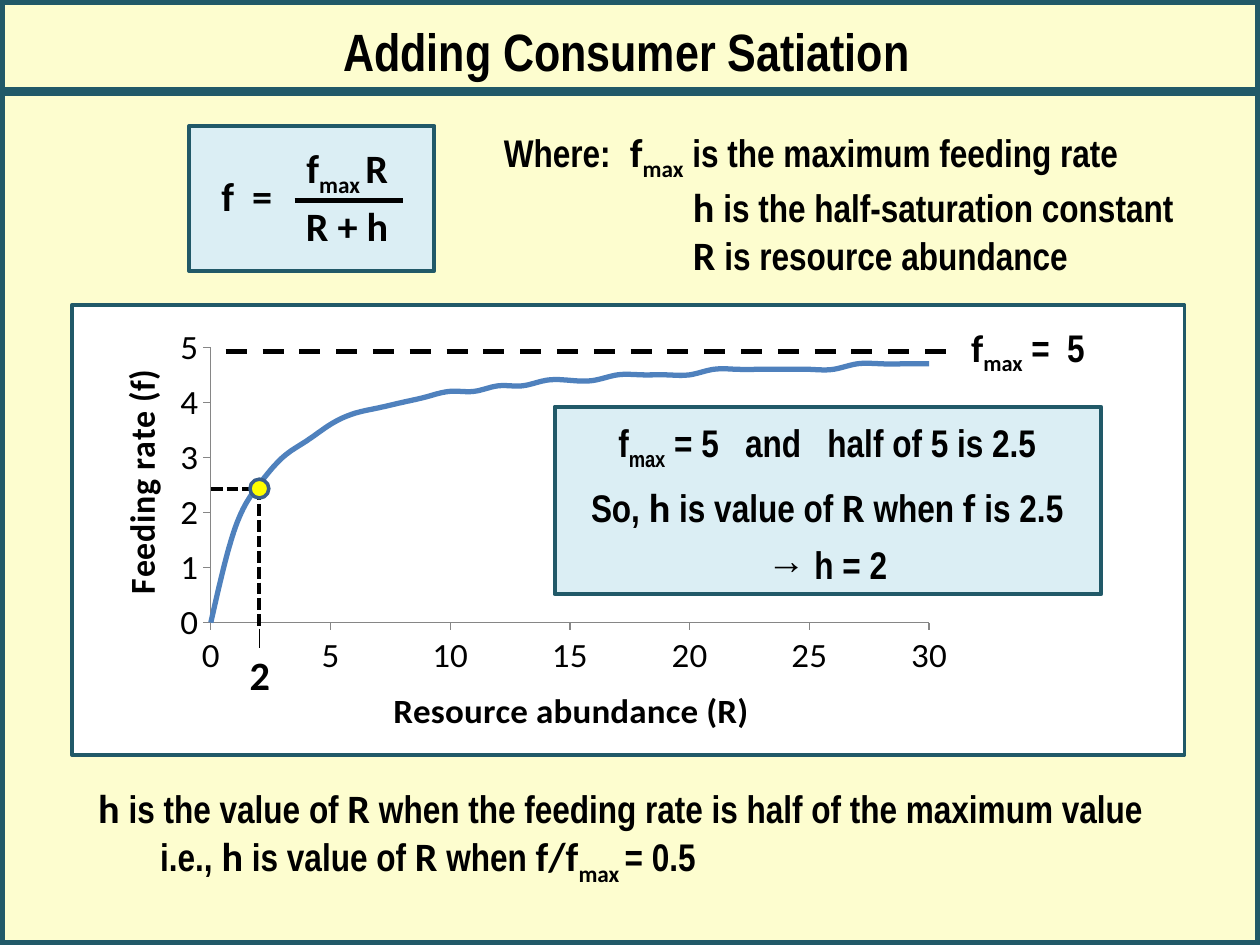
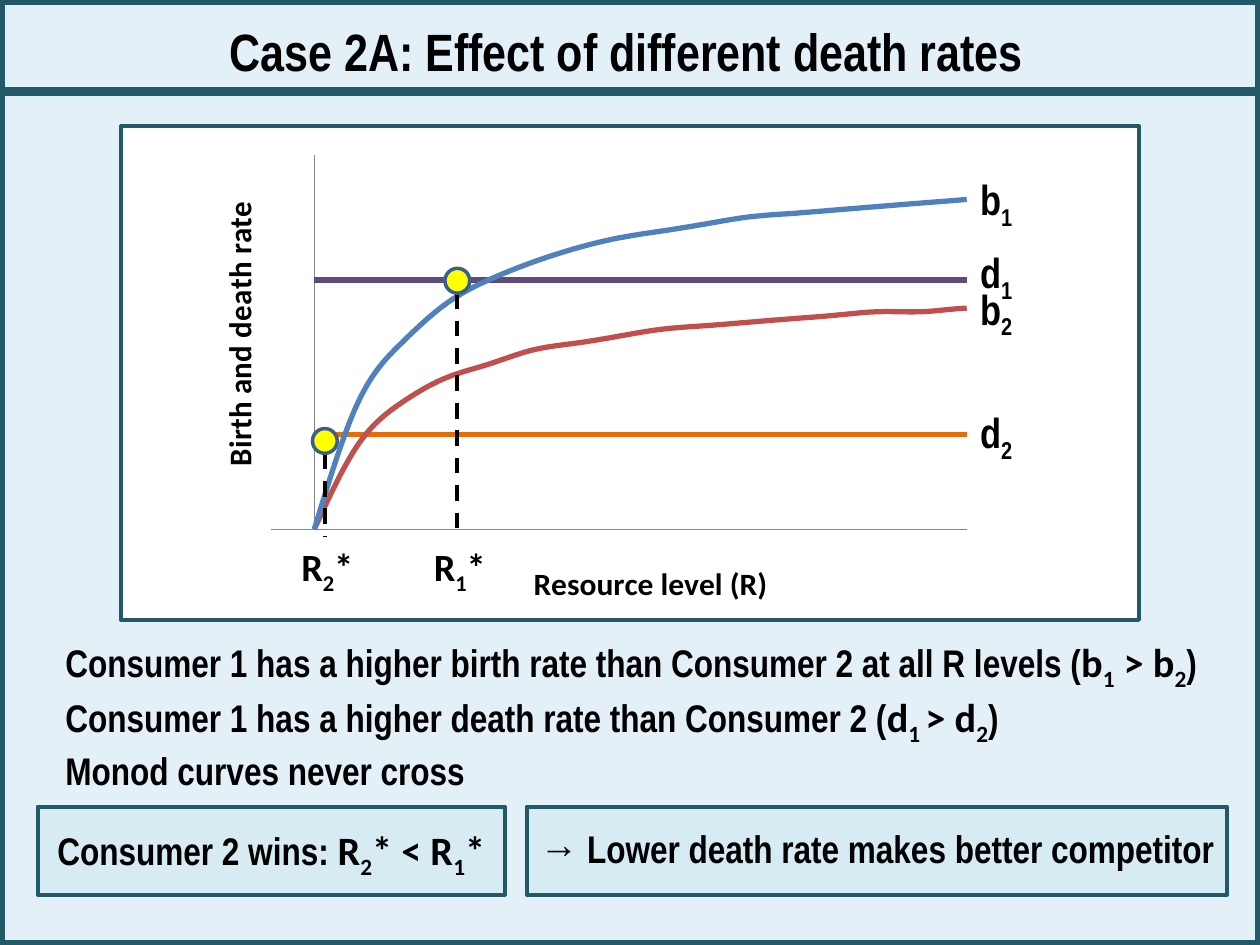
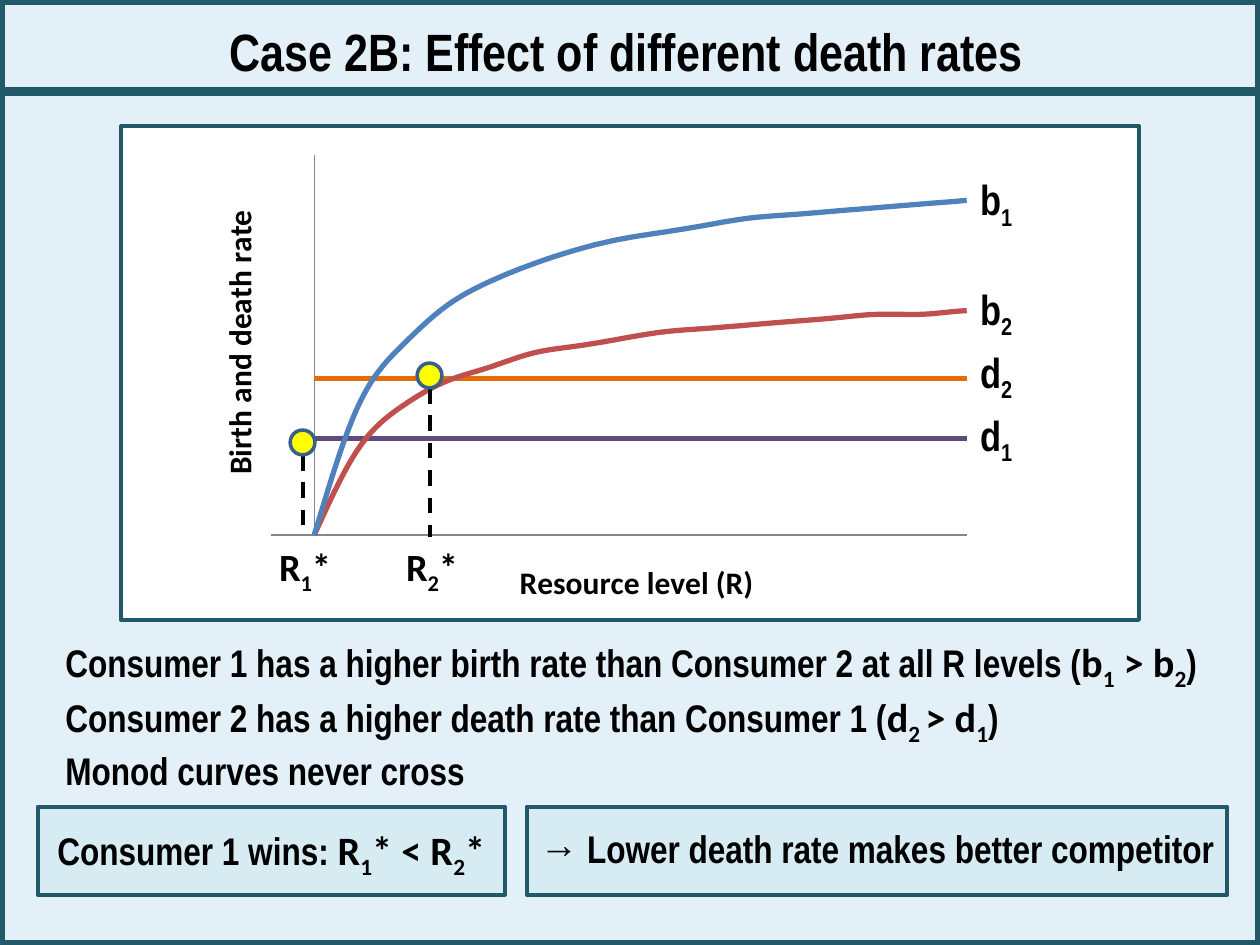
from dataclasses import dataclass, replace

from lxml import etree
from pptx import Presentation
from pptx.chart.data import XyChartData
from pptx.dml.color import RGBColor
from pptx.enum.chart import XL_CHART_TYPE, XL_TICK_LABEL_POSITION, XL_TICK_MARK
from pptx.enum.dml import MSO_LINE
from pptx.enum.shapes import MSO_CONNECTOR, MSO_SHAPE
from pptx.enum.text import MSO_AUTO_SIZE, PP_ALIGN
from pptx.oxml.ns import qn
from pptx.util import Cm, Pt

SMOOTH_SCATTER = XL_CHART_TYPE.XY_SCATTER_SMOOTH_NO_MARKERS
NO_LABELS = XL_TICK_LABEL_POSITION.NONE
TICK_OUTSIDE, TICK_NONE = XL_TICK_MARK.OUTSIDE, XL_TICK_MARK.NONE
DASH, SHORT_DASH = MSO_LINE.DASH, MSO_LINE.SQUARE_DOT
RECTANGLE, OVAL = MSO_SHAPE.RECTANGLE, MSO_SHAPE.OVAL
STRAIGHT = MSO_CONNECTOR.STRAIGHT
FIT_TEXT = MSO_AUTO_SIZE.SHAPE_TO_FIT_TEXT
LEFT, CENTER = PP_ALIGN.LEFT, PP_ALIGN.CENTER

SLIDE_WIDTH, SLIDE_HEIGHT = 25.4, 19.05
RESOURCE_LEVELS = range(31)
HALF_SATURATION = 2


@dataclass(frozen=True)
class Style:
    font: str
    size: float
    baseline: int = 0
    spacing: float = 0


@dataclass(frozen=True)
class Theme:
    ink: RGBColor = RGBColor(0x00, 0x00, 0x00)
    frame: RGBColor = RGBColor(0x21, 0x59, 0x68)
    cream: RGBColor = RGBColor(0xFD, 0xFD, 0xCF)
    pale_blue: RGBColor = RGBColor(0xE4, 0xF0, 0xF8)
    white: RGBColor = RGBColor(0xFF, 0xFF, 0xFF)
    note: RGBColor = RGBColor(0xDB, 0xEE, 0xF4)
    conclusion: RGBColor = RGBColor(0xD6, 0xEB, 0xF2)
    dot: RGBColor = RGBColor(0xFF, 0xFF, 0x00)
    dot_line: RGBColor = RGBColor(0x3A, 0x5F, 0x8C)
    axis: RGBColor = RGBColor(0x86, 0x86, 0x86)
    blue: RGBColor = RGBColor(0x4F, 0x81, 0xBD)
    red: RGBColor = RGBColor(0xC0, 0x50, 0x4D)
    purple: RGBColor = RGBColor(0x60, 0x4A, 0x7B)
    orange: RGBColor = RGBColor(0xE4, 0x6C, 0x0A)
    title: Style = Style("Arial Narrow", 30)
    words: Style = Style("Arial Narrow", 22)
    symbol: Style = Style("Calibri", 23)
    mark: Style = Style("Calibri", 22)
    curve: Style = Style("Arial Narrow", 24)
    box_line: float = 2.25
    curve_line: float = 3


THEME = Theme()


def words(text):
    return text, THEME.words


def symbol(text):
    return text, THEME.symbol


def sub(text, style=THEME.symbol):
    return text, replace(style, baseline=-25000)


def wide_space(style, spacing):
    return " ", replace(style, spacing=spacing)


def add_text(shapes, area, paragraphs, align=LEFT, gap=0, indents=()):
    """Write paragraphs, each a list of (text, style) spans."""
    box = shapes.add_textbox(*map(Cm, area))
    frame = box.text_frame
    frame.word_wrap = True
    frame.auto_size = FIT_TEXT
    for index, spans in enumerate(paragraphs):
        para = frame.paragraphs[0] if index == 0 else frame.add_paragraph()
        para.alignment = align
        if index and gap:
            para.space_before = Pt(gap)
        if index and indents:
            para._p.get_or_add_pPr().set("marL", str(Cm(indents[index])))
        for text, style in spans:
            span = para.add_run()
            span.text = text
            span.font.name = style.font
            span.font.size = Pt(style.size)
            span.font.bold = True
            span.font.color.rgb = THEME.ink
            properties = span._r.get_or_add_rPr()
            if style.baseline:
                properties.set("baseline", str(style.baseline))
            if style.spacing:
                properties.set("spc", str(int(style.spacing * 100)))


def add_figure(shapes, kind, area, fill, line=THEME.frame, width=THEME.box_line):
    figure = shapes.add_shape(kind, *map(Cm, area))
    figure.shadow.inherit = False
    if fill is None:
        figure.fill.background()
    else:
        figure.fill.solid()
        figure.fill.fore_color.rgb = fill
    figure.line.color.rgb = line
    figure.line.width = Pt(width)


def add_line(shapes, start, end, width, color=THEME.ink, dash=None):
    connector = shapes.add_connector(STRAIGHT, *map(Cm, (*start, *end)))
    connector.line.color.rgb = color
    connector.line.width = Pt(width)
    if dash is not None:
        connector.line.dash_style = dash
    etree.SubElement(connector._element.spPr, qn("a:effectLst"))


def add_dot(shapes, center, diameter):
    x, y = center
    area = (x - diameter / 2, y - diameter / 2, diameter, diameter)
    add_figure(shapes, OVAL, area, THEME.dot, THEME.dot_line, 2)


def new_slide(deck, title, background):
    slide = deck.slides.add_slide(deck.slide_layouts[6])
    slide.background.fill.solid()
    slide.background.fill.fore_color.rgb = background
    add_figure(slide.shapes, RECTANGLE, (0, 0, SLIDE_WIDTH, SLIDE_HEIGHT), None, width=6)
    add_line(slide.shapes, (0, 1.85), (SLIDE_WIDTH, 1.85), 5, THEME.frame)
    add_text(slide.shapes, (1.88, 0.25, 21.51, 1.55), [[(title, THEME.title)]], CENTER)
    return slide


def monod(ceiling, digits):
    """Values of a saturating curve over the resource levels."""
    return [round(ceiling * level / (level + HALF_SATURATION), digits)
            for level in RESOURCE_LEVELS]


def constant(value):
    return [value] * len(RESOURCE_LEVELS)


def set_layout(element, index, chart_area, place):
    """Fix a chart part at a place given in slide centimetres."""
    for old in element.findall(qn("c:layout")):
        element.remove(old)
    layout = etree.Element(qn("c:layout"))
    element.insert(index, layout)
    manual = etree.SubElement(layout, qn("c:manualLayout"))
    left, top, width, height = chart_area
    settings = {"xMode": "edge", "yMode": "edge",
                "x": (place[0] - left) / width, "y": (place[1] - top) / height}
    if len(place) == 4:
        settings = {"layoutTarget": "inner", **settings,
                    "w": place[2] / width, "h": place[3] / height}
    for name, value in settings.items():
        etree.SubElement(manual, qn(f"c:{name}")).set("val", str(value))


def format_axis(axis, limits, title, title_size, labels):
    axis.minimum_scale, axis.maximum_scale = limits
    axis.has_major_gridlines = False
    axis.minor_tick_mark = TICK_NONE
    axis.major_tick_mark = TICK_OUTSIDE if labels else TICK_NONE
    axis.format.line.color.rgb = THEME.axis
    axis.format.line.width = Pt(0.75)
    if labels:
        axis.tick_labels.font.size = Pt(title_size)
    else:
        axis.tick_label_position = NO_LABELS
    axis.axis_title.text_frame.text = title
    font = axis.axis_title.text_frame.paragraphs[0].runs[0].font
    font.name, font.size, font.bold = THEME.mark.font, Pt(title_size), True
    font.color.rgb = THEME.ink


def add_curves(slide, area, plot_area, curves, axes, title_size, labels=False):
    """Draw (values, colour) curves; axes holds (title, limits, title place) for x and y."""
    data = XyChartData()
    for number, (values, _) in enumerate(curves, 1):
        series = data.add_series(f"Series {number}")
        for level, value in zip(RESOURCE_LEVELS, values):
            series.add_data_point(level, value)
    chart = slide.shapes.add_chart(SMOOTH_SCATTER, *map(Cm, area), data).chart
    chart.has_legend = False
    chart.has_title = False
    chart.font.name, chart.font.size = THEME.mark.font, Pt(10)
    chart.font.color.rgb = THEME.ink
    chart.plots[0].vary_by_categories = False
    for smooth in chart._chartSpace.iter(qn("c:smooth")):
        smooth.set("val", "1")
    for series, (_, color) in zip(chart.plots[0].series, curves):
        series.format.line.color.rgb = color
        series.format.line.width = Pt(THEME.curve_line)
    set_layout(chart._chartSpace.chart.plotArea, 0, area, plot_area)
    for axis, (title, limits, place) in zip((chart.category_axis, chart.value_axis), axes):
        format_axis(axis, limits, title, title_size, labels)
        set_layout(axis.axis_title._element, 1, area, place)
    turned = chart.value_axis.axis_title.text_frame._txBody.bodyPr
    turned.set("rot", "-5400000")
    turned.set("vert", "horz")
    return chart


def add_formula(slide):
    shapes = slide.shapes.add_group_shape().shapes
    add_figure(shapes, RECTANGLE, (3.81, 2.54, 4.95, 2.92), THEME.note)
    add_text(shapes, (5.54, 2.77, 2.92, 1.24),
             [[symbol("f"), sub("max "), symbol("R")]], CENTER)
    add_text(shapes, (5.41, 3.94, 3.18, 1.24), [[symbol("R + h")]], CENTER)
    add_line(shapes, (5.94, 4.04), (8.13, 4.04), 3)
    add_text(shapes, (4.06, 3.33, 1.83, 1.24),
             [[symbol("f"), wide_space(THEME.symbol, 5), symbol("=")]], CENTER)


def add_equilibrium(slide, consumer, center):
    """Mark the resource level R* at which a consumer's births equal its deaths."""
    shapes = slide.shapes.add_group_shape().shapes
    x, y = center
    diameter, foot, label_width = 0.5, 10.82, 2.18
    add_line(shapes, (x, y + diameter / 2), (x, foot), 2.25, dash=DASH)
    add_dot(shapes, center, diameter)
    add_text(shapes, (x + 0.05 - label_width / 2, foot, label_width, 1.24),
             [[("R", THEME.mark), sub(consumer, THEME.mark), ("*", THEME.mark)]], CENTER)


def add_satiation_slide(deck):
    slide = new_slide(deck, "Adding Consumer Satiation", THEME.cream)
    shapes = slide.shapes
    add_figure(shapes, RECTANGLE, (1.45, 6.15, 22.43, 9.07), THEME.white)
    chart = add_curves(
        slide, (1.7, 6.58, 17.73, 8.38), (4.25, 6.96, 14.48, 5.74),
        [(monod(5, 1), THEME.blue)],
        [("Resource abundance (R)", (0, 30), (7.8, 13.89)),
         ("Feeding rate (f)", (0, 5), (2.22, 7.44))],
        title_size=20, labels=True)
    chart.category_axis.major_unit = 5
    chart.value_axis.major_unit = 1

    add_text(shapes, (9.91, 2.44, 14.66, 3.2), [
        [words("Where:\t"), symbol("f"), sub("max"), words(" is the maximum feeding rate")],
        [symbol("h"), words(" is the half-saturation constant")],
        [symbol("R"), words(" is resource abundance")],
    ], indents=(0, 3.81, 3.81))
    add_formula(slide)

    half_x, half_y, axis_y = 5.23, 9.85, 12.67
    add_line(shapes, (4.25, half_y), (half_x, half_y), 2.25, dash=SHORT_DASH)
    add_line(shapes, (half_x, half_y), (half_x, axis_y), 2.25, dash=SHORT_DASH)
    add_line(shapes, (half_x, axis_y), (half_x, 13.06), 0.75)
    add_dot(shapes, (half_x, half_y), 0.38)
    add_text(shapes, (4.62, 12.98, 1.24, 1.24), [[symbol("2")]], CENTER)

    add_line(shapes, (4.55, 7.09), (19.23, 7.09), 3, dash=DASH)
    add_text(shapes, (19.33, 6.4, 3.07, 1.19),
             [[("f", THEME.mark), sub("max", THEME.mark), words(" ="),
               wide_space(THEME.words, 5), words("5")]])

    add_figure(shapes, RECTANGLE, (11.18, 8.2, 11.02, 3.78), THEME.note)
    broad = wide_space(THEME.words, 10)
    add_text(shapes, (11.33, 8.33, 10.69, 3.56), [
        [words("f"), sub("max", THEME.words), words(" = 5"), broad, words("and"), broad,
         words("half of 5 is 2.5")],
        [words("So, "), symbol("h"), words(" is value of "), symbol("R"),
         words(" when "), symbol("f"), words(" is 2.5")],
        [words("→ h = 2")],
    ], CENTER, gap=6)

    add_text(shapes, (1.73, 15.67, 22, 2.24), [
        [symbol("h"), words(" is the value of "), symbol("R"),
         words(" when the feeding rate is half of the maximum value")],
        [words("i.e., "), symbol("h"), words(" is value of "), symbol("R"),
         words(" when "), symbol("f/f"), sub("max "), words("= 0.5")],
    ], indents=(0, 1.25))


def add_case_slide(deck, case, winner, loser, death_rates, title_places,
                   label_tops, equilibria):
    """Compare two consumers; the one with the lower death rate wins."""
    slide = new_slide(deck, f"Case {case}: Effect of different death rates", THEME.pale_blue)
    shapes = slide.shapes
    add_figure(shapes, RECTANGLE, (2.44, 2.54, 20.52, 9.96), THEME.white)
    x_title_place, y_title_place = title_places
    add_curves(
        slide, (3.38, 2.69, 16.76, 9.65), (5.46, 3.13, 14.03, 7.69),
        [(monod(106.67, 0), THEME.blue), (monod(71.11, 0), THEME.red),
         (constant(death_rates[0]), THEME.purple),
         (constant(death_rates[1]), THEME.orange)],
        [("Resource level (R)", (-1, 15), x_title_place),
         ("Birth and death rate", (0, 106.7), y_title_place)],
        title_size=18)
    for consumer, center in equilibria.items():
        add_equilibrium(slide, consumer, center)
    for (letter, consumer), top in label_tops.items():
        add_text(shapes, (19.51, top, 2.06, 1.27),
                 [[(letter, THEME.curve), sub(consumer, THEME.curve)]])

    add_text(shapes, (1.07, 12.73, 23.88, 3.18), [
        [words("Consumer 1 has a higher birth rate than Consumer 2 at all R levels ("),
         symbol("b"), sub("1"), symbol(" > b"), sub("2"), words(")")],
        [words(f"Consumer {loser} has a higher death rate than Consumer {winner} ("),
         symbol("d"), sub(f"{loser} "), symbol("> d"), sub(winner), words(")")],
        [words("Monod curves never cross")],
    ])
    result = [words(f"Consumer {winner} wins: "), symbol("R"), sub(winner),
              symbol("* < R"), sub(loser), symbol("*")]
    lesson = [words("→ Lower death rate makes better competitor")]
    for left, width, spans in ((0.76, 9.42, result), (10.62, 14.12, lesson)):
        add_figure(shapes, RECTANGLE, (left, 16.26, width, 1.78), THEME.conclusion)
        add_text(shapes, (left - 0.08, 16.51, width + 0.16, 1.24), [spans], CENTER)


def main():
    deck = Presentation()
    deck.slide_width, deck.slide_height = Cm(SLIDE_WIDTH), Cm(SLIDE_HEIGHT)
    add_satiation_slide(deck)
    birth_tops = {"b1": 3.38, "b2": 5.59}
    add_case_slide(
        deck, "2A", winner="2", loser="1", death_rates=(71, 27),
        title_places=((10.64, 11.37), (4.27, 4.07)),
        label_tops={**birth_tops, "d1": 4.85, "d2": 8.08},
        equilibria={"1": (9.22, 5.66), "2": (6.55, 8.89)})
    add_case_slide(
        deck, "2B", winner="1", loser="2", death_rates=(27, 44),
        title_places=((10.36, 11.23), (4.27, 4.15)),
        label_tops={**birth_tops, "d1": 8.13, "d2": 6.86},
        equilibria={"1": (6.1, 8.92), "2": (8.66, 7.57)})
    deck.save("out.pptx")


if __name__ == "__main__":
    main()
